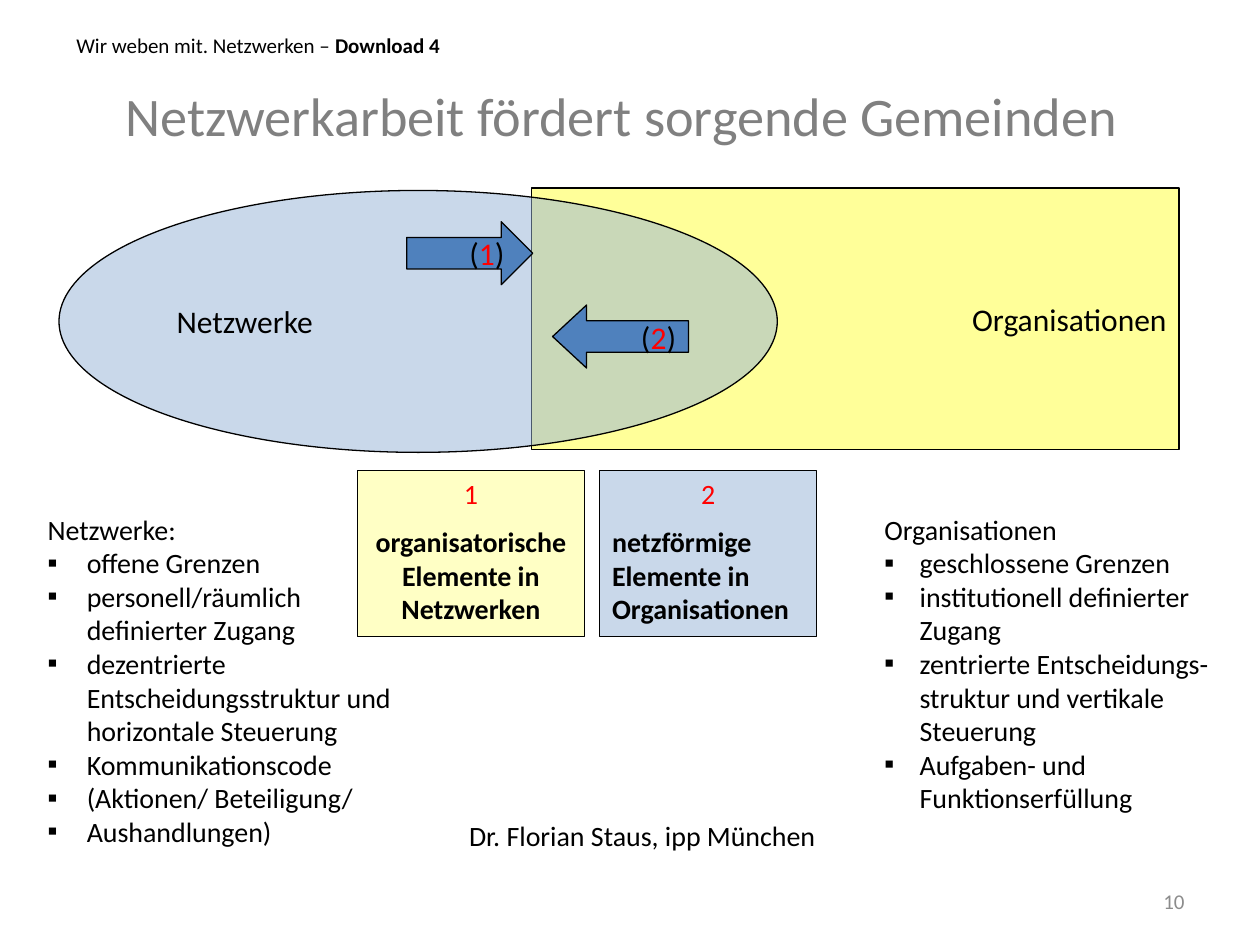
import dataclasses

import pptx
import pptx.dml.color
import pptx.enum.shapes
import pptx.enum.text
import pptx.oxml.ns
import pptx.util
from lxml import etree

Cm, Pt = pptx.util.Cm, pptx.util.Pt
RGB = pptx.dml.color.RGBColor.from_string
SHAPE = pptx.enum.shapes.MSO_SHAPE
ALIGN = pptx.enum.text.PP_ALIGN
ANCHOR = pptx.enum.text.MSO_ANCHOR
qn = pptx.oxml.ns.qn


@dataclasses.dataclass(frozen=True)
class Theme:
    font: str = "Calibri"
    title: int = 31
    label: int = 18
    body: int = 16
    small: int = 12
    black: str = "000000"
    red: str = "FF0000"
    title_grey: str = "808080"
    number_grey: str = "8C8C8C"
    yellow: str = "FFFF99"
    light_blue: str = "95B3D7"
    blue: str = "4F81BD"


T = Theme()


def add_run(p, text, size, color=T.black, bold=False):
    r = p.add_run()
    r.text = text
    r.font.name, r.font.size, r.font.bold = T.font, Pt(size), bold
    r.font.color.rgb = RGB(color)


def add_text(s, box, anchor=ANCHOR.TOP, align=ALIGN.LEFT):
    """Add a wrapping text box and return its text frame."""
    tf = s.shapes.add_textbox(*map(Cm, box)).text_frame
    tf.word_wrap = True
    tf.vertical_anchor = anchor
    tf.paragraphs[0].alignment = align
    return tf


def add_figure(s, kind, box, fill, align, opacity=100, anchor=ANCHOR.MIDDLE, wrap=False):
    """Add an outlined shape, its fill opacity in percent."""
    sp = s.shapes.add_shape(kind, *map(Cm, box))
    sp.shadow.inherit = False
    sp.fill.solid()
    sp.fill.fore_color.rgb = RGB(fill)
    if opacity < 100:
        color = sp.fill._xPr.find(".//" + qn("a:srgbClr"))
        etree.SubElement(color, qn("a:alpha"), val=str(opacity * 1000))
    sp.line.color.rgb = RGB(T.black)
    sp.line.width = Pt(0.75)
    tf = sp.text_frame
    tf.word_wrap = wrap
    tf.vertical_anchor = anchor
    tf.paragraphs[0].alignment = align
    return sp


def add_bullet(p, indent):
    pPr = p._p.get_or_add_pPr()
    pPr.set("marL", str(Cm(indent)))
    pPr.set("indent", str(-Cm(indent)))
    etree.SubElement(pPr, qn("a:buFont"), typeface=T.font)
    etree.SubElement(pPr, qn("a:buChar"), char="▪")


def header(s, x, y, w):
    p = add_text(s, (x + 0.2, y, 10, 0.76)).paragraphs[0]
    add_run(p, "Wir weben mit. Netzwerken – ", T.small)
    add_run(p, "Download 4", T.small, bold=True)
    tf = add_text(s, (x, y + 0.2, w, 3.18), ANCHOR.MIDDLE, ALIGN.CENTER)
    add_run(tf.paragraphs[0], "Netzwerkarbeit fördert sorgende Gemeinden", T.title, T.title_grey)


def overlap_diagram(s, x, y):
    """Draw the network ellipse over the organisation box, with an arrow each way."""
    fields = [
        (SHAPE.RECTANGLE, (x + 9.52, y, 13.06, 5.28), T.yellow, ALIGN.RIGHT, 100, "Organisationen"),
        (SHAPE.OVAL, (x, y + 0.05, 14.48, 5.28), T.light_blue, ALIGN.LEFT, 50, "Netzwerke"),
    ]
    for kind, box, fill, align, opacity, label in fields:
        sp = add_figure(s, kind, box, fill, align, opacity)
        add_run(sp.text_frame.paragraphs[0], label, T.label)

    arrows = [
        (SHAPE.RIGHT_ARROW, (x + 7.01, y + 0.68, 2.54, 1.27), 0.5, "1"),
        (SHAPE.LEFT_ARROW, (x + 9.95, y + 2.36, 2.74, 1.27), 0.54, "2"),
    ]
    for kind, box, head, number in arrows:
        sp = add_figure(s, kind, box, T.blue, ALIGN.RIGHT)
        sp.adjustments[1] = head
        p = sp.text_frame.paragraphs[0]
        for text, color in (("(", T.black), (number, T.red), (")", T.black)):
            add_run(p, text, T.label, color)


def legend_card(s, box, fill, opacity, number, text, align):
    sp = add_figure(s, SHAPE.RECTANGLE, box, fill, ALIGN.CENTER, opacity, ANCHOR.TOP, wrap=True)
    tf = sp.text_frame
    add_run(tf.paragraphs[0], number, T.body, T.red)
    p = tf.add_paragraph()
    p.alignment = align
    p.space_before = Pt(T.body / 2)
    add_run(p, text, T.body, bold=True)


def feature_list(s, box, heading, items, indent):
    tf = add_text(s, box)
    add_run(tf.paragraphs[0], heading, T.body)
    for item in items:
        p = tf.add_paragraph()
        add_bullet(p, indent)
        add_run(p, item, T.body)


def footer(s, x, y):
    """Place the author line and, lower right, the slide number."""
    tf = add_text(s, (x, y, 7.57, 0.94), align=ALIGN.RIGHT)
    tf.word_wrap = False
    add_run(tf.paragraphs[0], "Dr. Florian Staus, ipp München", T.body)
    tf = add_text(s, (x + 9.09, y + 1.27, 5.92, 1.02), ANCHOR.MIDDLE, ALIGN.RIGHT)
    add_run(tf.paragraphs[0], "10", T.small, T.number_grey)


def main():
    prs = pptx.Presentation()
    prs.slide_width, prs.slide_height = Cm(25.4), Cm(19.05)
    s = prs.slides.add_slide(prs.slide_layouts[6])

    header(s, 1.09, 0.53, 22.86)
    overlap_diagram(s, 1.19, 3.79)
    feature_list(s, (0.71, 10.2, 7.52, 7.09), "Netzwerke:", [
        "offene Grenzen",
        "personell/räumlich definierter Zugang",
        "dezentrierte Entscheidungsstruktur und horizontale Steuerung",
        "Kommunikationscode",
        "(Aktionen/ Beteiligung/",
        "Aushandlungen)",
    ], 0.79)
    feature_list(s, (17.58, 10.2, 7.62, 7.44), "Organisationen", [
        "geschlossene Grenzen",
        "institutionell definierter Zugang",
        "zentrierte Entscheidungs-struktur und vertikale Steuerung",
        "Aufgaben- und Funktionserfüllung",
    ], 0.71)
    legend_card(s, (7.21, 9.49, 4.57, 3.34), T.yellow, 57, "1",
                "organisatorische Elemente in Netzwerken", ALIGN.CENTER)
    legend_card(s, (12.09, 9.49, 4.37, 3.34), T.light_blue, 50, "2",
                "netzförmige Elemente in Organisationen", ALIGN.LEFT)
    footer(s, 9.12, 16.38)

    prs.save("out.pptx")


if __name__ == "__main__":
    main()
